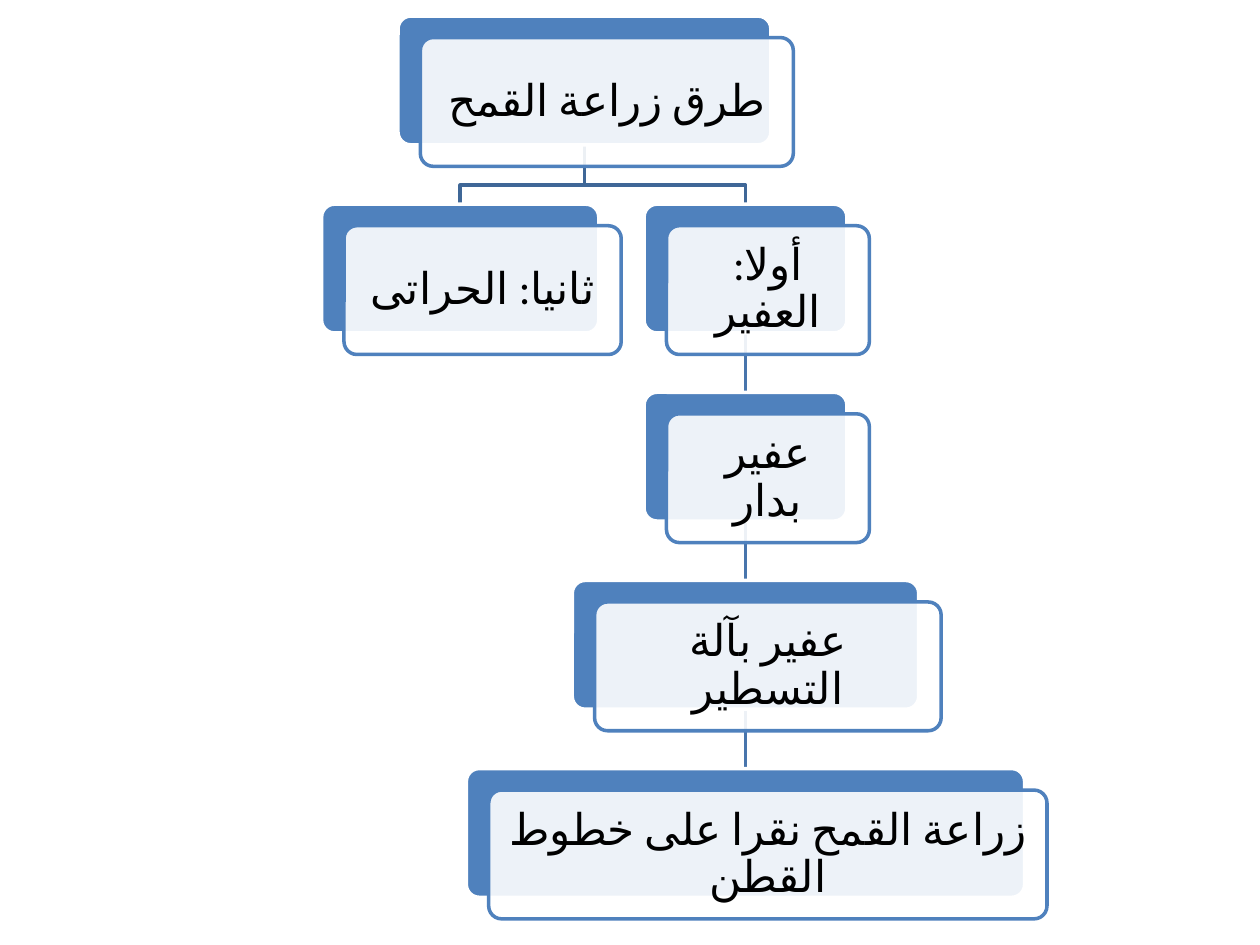
from dataclasses import dataclass

from lxml.etree import SubElement
from pptx import Presentation
from pptx.dml.color import RGBColor
from pptx.enum.shapes import MSO_CONNECTOR as CONN, MSO_SHAPE as SHAPE
from pptx.enum.text import MSO_ANCHOR as ANCHOR, PP_ALIGN as ALIGN
from pptx.oxml.ns import qn
from pptx.util import Pt

BLUE, WHITE, BLACK = "4F81BD", "FFFFFF", "000000"
BRANCH, STEM = "3F6797", "4875AC"
FONT = "Calibri"
TOP, PITCH, HEIGHT = 9.2, 107.5, 73.6  # rows of the tree
SHIFT_X, SHIFT_Y = 12.8, 12.3  # front card against back card
INSET = 9.4


@dataclass
class Node:
    text: str
    center: float
    row: int
    width: float

    @property
    def top(self) -> float:
        return TOP + self.row * PITCH

    @property
    def bottom(self) -> float:
        return self.top + HEIGHT


ROOT = Node("طرق زراعة القمح", 334, 0, 213.1)
SECOND = Node("ثانيا: الحراتى", 263, 1, 158.4)
FIRST = Node("أولا: العفير", 426, 1, 115.9)
METHODS = [
    Node("عفير بدار", 426, 2, 115.9),
    Node("عفير بآلة التسطير", 426, 3, 198),
    Node("زراعة القمح نقرا على خطوط القطن", 426, 4, 319),
]


def rgb(color: str) -> RGBColor:
    return RGBColor.from_string(color)


def set_line(sp, color: str) -> None:
    sp.line.color.rgb = rgb(color)
    sp.line.width = Pt(2)


def draw_stem(shapes, parent: Node, child: Node) -> None:
    """Straight line down to a child below its parent."""
    c = shapes.add_connector(CONN.STRAIGHT, Pt(parent.center), Pt(parent.bottom),
                             Pt(child.center), Pt(child.top))
    set_line(c, STEM)
    SubElement(c._element.spPr, qn("a:effectLst"))


def draw_branch(shapes, parent: Node, child: Node) -> None:
    """Elbow line to a child beside its parent."""
    bend = child.top - 10.9
    builder = shapes.build_freeform(Pt(parent.center), Pt(parent.bottom))
    builder.add_line_segments([(Pt(parent.center), Pt(bend)),
                               (Pt(child.center), Pt(bend)),
                               (Pt(child.center), Pt(child.top))], close=False)
    sp = builder.convert_to_shape()
    sp.shadow.inherit = False
    sp.fill.background()
    set_line(sp, BRANCH)


def draw_card(shapes, left: float, top: float, width: float, fill: str, line: str):
    sp = shapes.add_shape(SHAPE.ROUNDED_RECTANGLE, Pt(left), Pt(top),
                          Pt(width), Pt(HEIGHT))
    sp.adjustments[0] = 0.1
    sp.shadow.inherit = False
    sp.fill.solid()
    sp.fill.fore_color.rgb = rgb(fill)
    set_line(sp, line)
    return sp


def draw_node(shapes, node: Node) -> None:
    left = node.center - node.width / 2
    draw_card(shapes, left, node.top, node.width, BLUE, WHITE)
    front = draw_card(shapes, left + SHIFT_X, node.top + SHIFT_Y, node.width,
                      WHITE, BLUE)
    # Let the back card show through
    color = front._element.spPr.find(qn("a:solidFill"))[0]
    SubElement(color, qn("a:alpha"), val="90000")

    tf = front.text_frame
    tf.word_wrap = True
    tf.vertical_anchor = ANCHOR.MIDDLE
    tf.margin_left = tf.margin_right = Pt(INSET)
    tf.margin_top = tf.margin_bottom = Pt(INSET)
    p = tf.paragraphs[0]
    p.text = node.text
    p.alignment = ALIGN.CENTER
    p.line_spacing = 0.9
    p.space_after = Pt(8.75)
    p.font.name = FONT
    p.font.size = Pt(25)
    p.font.color.rgb = rgb(BLACK)
    # Right-to-left Arabic, with the same font for complex script
    p_pr = p._p.get_or_add_pPr()
    p_pr.set("rtl", "1")
    r_pr = p_pr.find(qn("a:defRPr"))
    r_pr.set("lang", "ar-EG")
    SubElement(r_pr, qn("a:cs"), typeface=FONT)
    p.runs[0]._r.get_or_add_rPr().set("lang", "ar-EG")


def main() -> None:
    prs = Presentation()
    prs.slide_width, prs.slide_height = Pt(720), Pt(540)
    s = prs.slides.add_slide(prs.slide_layouts[6])
    tree = s.shapes.add_group_shape().shapes

    # Lines, behind the cards
    chain = [FIRST, *METHODS]
    for parent, child in zip(chain, METHODS):
        draw_stem(tree, parent, child)
    for child in (FIRST, SECOND):
        draw_branch(tree, ROOT, child)

    # Cards
    for node in (ROOT, SECOND, *chain):
        draw_node(tree, node)

    prs.save("out.pptx")


if __name__ == "__main__":
    main()
